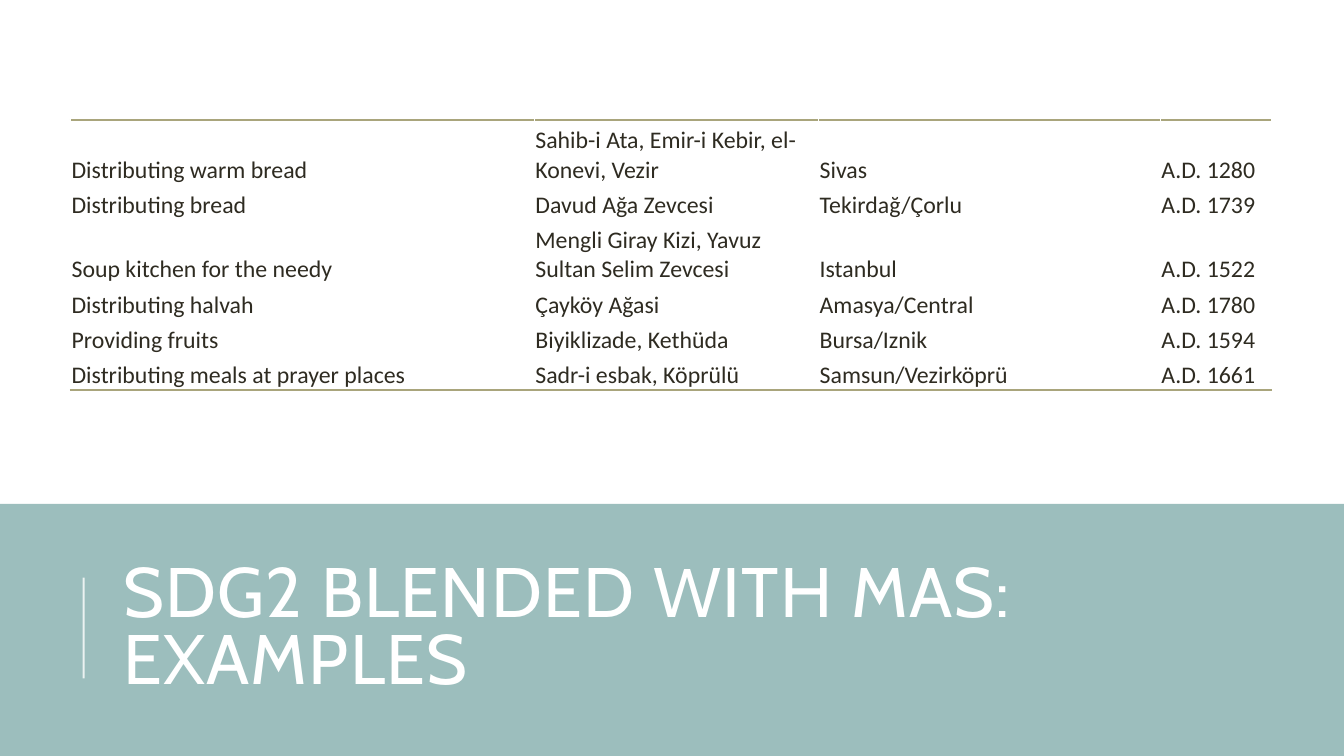
from typing import NamedTuple

from pptx import Presentation
from pptx import util as u
from pptx.dml.color import RGBColor
from pptx.enum import shapes, text
from pptx.oxml import parse_xml
from pptx.oxml.ns import nsdecls, qn

WHITE = RGBColor(0xFF, 0xFF, 0xFF)
TEAL = RGBColor(0x9C, 0xBE, 0xBD)
INK = RGBColor(0x2E, 0x2B, 0x21)
KHAKI = RGBColor(0xA9, 0xA5, 0x7C)


class Endowment(NamedTuple):
    service: str
    founder: str
    place: str
    year: str
    height: float = 0.35


ENDOWMENTS = [
    Endowment("Distributing warm bread", "Sahib-i Ata, Emir-i Kebir, el-Konevi, Vezir",
              "Sivas", "A.D. 1280", 0.64),
    Endowment("Distributing bread", "Davud Ağa Zevcesi", "Tekirdağ/Çorlu", "A.D. 1739"),
    Endowment("Soup kitchen for the needy", "Mengli Giray Kizi, Yavuz Sultan Selim Zevcesi",
              "Istanbul", "A.D. 1522", 0.64),
    Endowment("Distributing halvah", "Çayköy Ağasi", "Amasya/Central", "A.D. 1780"),
    Endowment("Providing fruits", "Biyiklizade, Kethüda", "Bursa/Iznik", "A.D. 1594"),
    Endowment("Distributing meals at prayer places", "Sadr-i esbak, Köprülü",
              "Samsun/Vezirköprü", "A.D. 1661"),
]
COLUMN_WIDTHS = [4.6, 2.82, 3.39, 1.1]


def add_run(p, words: str, font: str, size: float, color: RGBColor):
    r = p.add_run()
    r.text = words
    r.font.name = font
    r.font.size = u.Pt(size)
    r.font.color.rgb = color
    return r


def add_border(cell, side: str) -> None:
    """Draw a 1 pt rule on one side of a cell: lnT or lnB."""
    cell._tc.get_or_add_tcPr().insert(0, parse_xml(
        f'<a:{side} {nsdecls("a")} w="12700"><a:solidFill>'
        f'<a:srgbClr val="{KHAKI}"/></a:solidFill></a:{side}>'))


def fill_cell(cell, words: str) -> None:
    cell.fill.background()
    cell.vertical_anchor = text.MSO_ANCHOR.BOTTOM
    cell.margin_left = cell.margin_right = cell.margin_top = u.Inches(0.01)
    cell.margin_bottom = 0
    add_run(cell.text_frame.paragraphs[0], words, "Calibri", 17, INK)


def add_endowment_table(s) -> None:
    tbl = s.shapes.add_table(len(ENDOWMENTS), len(COLUMN_WIDTHS), u.Inches(0.7),
                             u.Inches(1.19), u.Inches(11.92), u.Inches(2.69)).table
    tbl.first_row = tbl.horz_banding = False
    for column, width in zip(tbl.columns, COLUMN_WIDTHS):
        column.width = u.Inches(width)
    for i, endowment in enumerate(ENDOWMENTS):
        tbl.rows[i].height = u.Inches(endowment.height)
        for j, words in enumerate(endowment[:4]):
            fill_cell(tbl.cell(i, j), words)
    for j in range(len(COLUMN_WIDTHS)):
        add_border(tbl.cell(0, j), "lnT")
        add_border(tbl.cell(len(ENDOWMENTS) - 1, j), "lnB")


def add_title(s) -> None:
    title = s.shapes.title
    title.left, title.top = u.Inches(1.12), u.Inches(5.44)
    title.width, title.height = u.Inches(10.63), u.Inches(1.64)
    tf = title.text_frame
    tf.word_wrap = True
    tf.auto_size = text.MSO_AUTO_SIZE.NONE
    tf.vertical_anchor = text.MSO_ANCHOR.MIDDLE
    p = tf.paragraphs[0]
    p.alignment = text.PP_ALIGN.LEFT
    p.line_spacing = 0.8
    r = add_run(p, "SDG2 BLENDED WITH MAS: EXAMPLES", "Cabin", 50, WHITE)
    r.font._element.set("spc", "100")


def add_band(s) -> None:
    band = s.shapes.add_shape(shapes.MSO_SHAPE.RECTANGLE, 0, u.Inches(5),
                              u.Inches(13.33), u.Inches(2.5))
    band.shadow.inherit = False
    band.fill.solid()
    band.fill.fore_color.rgb = TEAL
    band.line.fill.background()
    # Keep the band behind the title
    s.shapes.title.element.addprevious(band.element)


def add_title_rule(s) -> None:
    rule = s.shapes.add_connector(shapes.MSO_CONNECTOR.STRAIGHT, u.Inches(0.83),
                                  u.Inches(6.73), u.Inches(0.83), u.Inches(5.73))
    rule.line.color.rgb = WHITE
    rule.line.width = u.Pt(1.5)
    color = rule.element.spPr.find(".//" + qn("a:srgbClr"))
    color.append(parse_xml(f'<a:alpha {nsdecls("a")} val="80000"/>'))
    rule.element.spPr.append(parse_xml(f'<a:effectLst {nsdecls("a")}/>'))


def main() -> None:
    prs = Presentation()
    prs.slide_width, prs.slide_height = u.Inches(13.33), u.Inches(7.5)
    s = prs.slides.add_slide(prs.slide_layouts[5])
    # Title band
    add_band(s)
    add_title(s)
    add_title_rule(s)
    # Examples
    add_endowment_table(s)
    prs.save("out.pptx")


if __name__ == "__main__":
    main()
